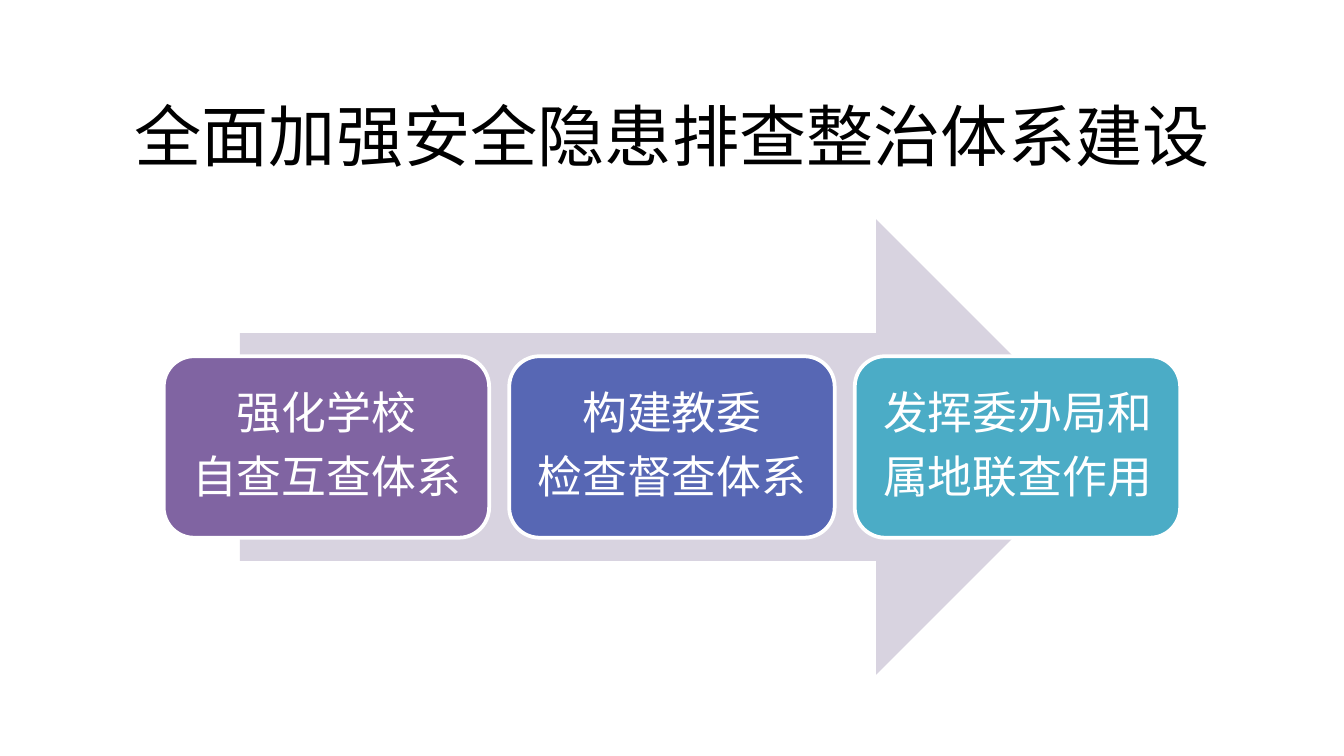
from lxml.etree import SubElement
from pptx import Presentation
from pptx.dml.color import RGBColor
from pptx.enum.shapes import MSO_SHAPE as Shape
from pptx.enum.text import MSO_ANCHOR as Anchor, PP_ALIGN as Align
from pptx.oxml.ns import qn
from pptx.util import Cm, Pt

# Content
TITLE = "全面加强安全隐患排查整治体系建设"
STEPS = [
    (("强化学校", "自查互查体系"), "8064A2"),
    (("构建教委", "检查督查体系"), "5767B4"),
    (("发挥委办局和", "属地联查作用"), "4BACC6"),
]

THEME = {
    "font": "Noto Sans CJK SC",
    "title_size": 36,
    "step_size": 24,
    "title": "000000",
    "light": "FFFFFF",
    "arrow": "D8D3E0",
}

# Layout in centimetres
SLIDE_W, SLIDE_H = 25.4, 14.29
TITLE_TOP, TITLE_W, TITLE_H = 1.75, 21.6, 1.6
ARROW_W, ARROW_H = 16.33, 8.61
STEP_W, STEP_H, STEP_GAP = 6.15, 3.43, 0.38
FLOW_MIDDLE = 8.45


def rgb(name):
    return RGBColor.from_string(name)


def style_text(p, size, color):
    p.alignment = Align.CENTER
    for r in p.runs:
        r.font.name = THEME["font"]
        r.font.size = Pt(size)
        r.font.color.rgb = rgb(color)
        # East Asian typeface
        SubElement(r.font._element, qn("a:ea"), typeface=THEME["font"])


def add_block(slide, kind, left, width, height, fill):
    """Add a filled shape centred on the flow's horizontal axis."""
    sp = slide.shapes.add_shape(
        kind, Cm(left), Cm(FLOW_MIDDLE - height / 2), Cm(width), Cm(height))
    sp.shadow.inherit = False
    sp.fill.solid()
    sp.fill.fore_color.rgb = rgb(fill)
    sp.line.fill.background()
    return sp


def add_step(slide, left, lines, fill):
    sp = add_block(slide, Shape.ROUNDED_RECTANGLE, left, STEP_W, STEP_H, fill)
    sp.line.color.rgb = rgb(THEME["light"])
    sp.line.width = Pt(2)
    tf = sp.text_frame
    tf.word_wrap = True
    tf.vertical_anchor = Anchor.MIDDLE
    tf.margin_left = tf.margin_right = Cm(0.25)
    tf.margin_top = tf.margin_bottom = Cm(0.25)
    tf.text = "\n".join(lines)
    for p in tf.paragraphs:
        style_text(p, THEME["step_size"], THEME["light"])
        p.line_spacing = 0.9
        # Space after, relative to the type size
        after = SubElement(p._p.get_or_add_pPr(), qn("a:spcAft"))
        SubElement(after, qn("a:spcPct"), val="35000")


def main():
    prs = Presentation()
    prs.slide_width, prs.slide_height = Cm(SLIDE_W), Cm(SLIDE_H)
    slide = prs.slides.add_slide(prs.slide_layouts[5])

    # Title
    title = slide.shapes.title
    title.left, title.top = Cm((SLIDE_W - TITLE_W) / 2), Cm(TITLE_TOP)
    title.width, title.height = Cm(TITLE_W), Cm(TITLE_H)
    title.text_frame.text = TITLE
    title.text_frame.vertical_anchor = Anchor.MIDDLE
    style_text(title.text_frame.paragraphs[0], THEME["title_size"], THEME["title"])

    # Background arrow
    add_block(slide, Shape.RIGHT_ARROW, (SLIDE_W - ARROW_W) / 2,
              ARROW_W, ARROW_H, THEME["arrow"])

    # Steps, centred as a row
    pitch = STEP_W + STEP_GAP
    first = (SLIDE_W - len(STEPS) * pitch + STEP_GAP) / 2
    for i, (lines, fill) in enumerate(STEPS):
        add_step(slide, first + i * pitch, lines, fill)

    prs.save("out.pptx")


if __name__ == "__main__":
    main()
